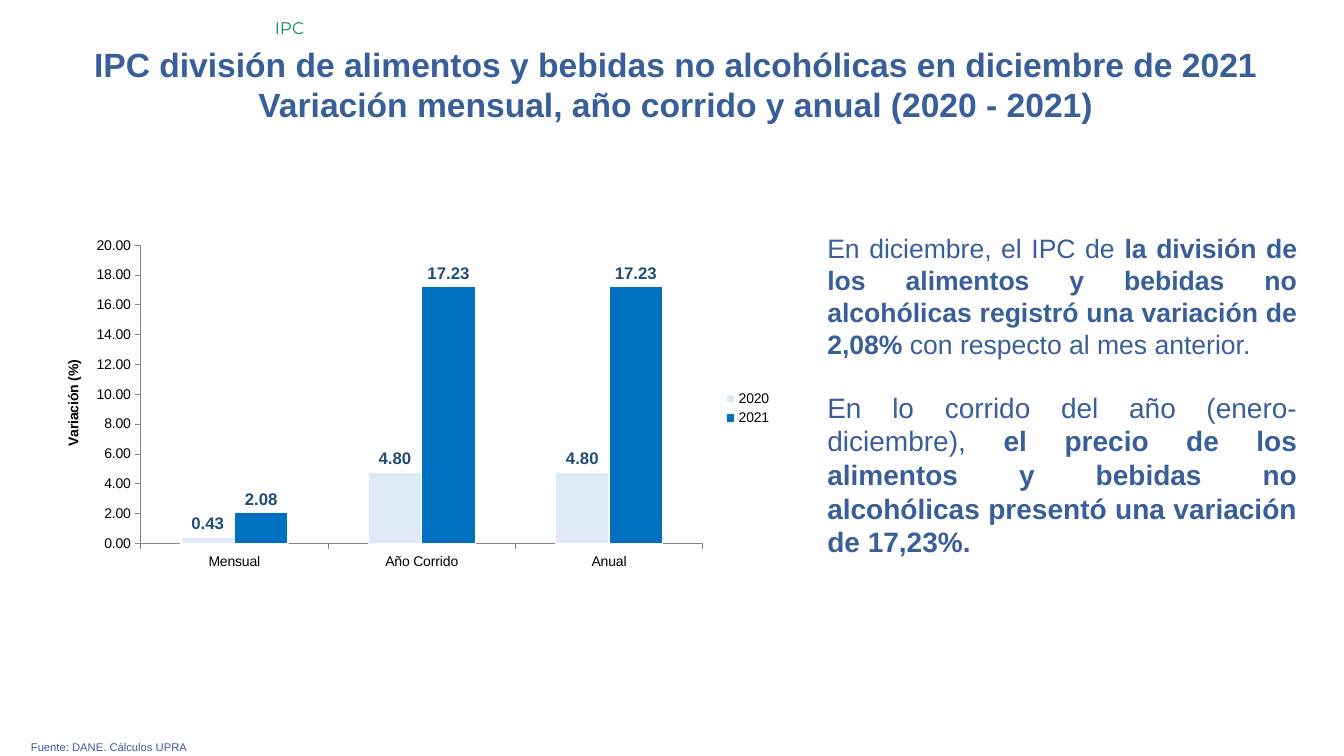
from dataclasses import dataclass

from lxml import etree
from pptx import Presentation
from pptx.chart.data import CategoryChartData
from pptx.dml.color import RGBColor
from pptx.enum.chart import (XL_CHART_TYPE, XL_LABEL_POSITION, XL_LEGEND_POSITION,
                             XL_TICK_LABEL_POSITION, XL_TICK_MARK)
from pptx.enum.text import PP_ALIGN
from pptx.oxml.ns import qn
from pptx.util import Cm, Pt

CLUSTERED = XL_CHART_TYPE.COLUMN_CLUSTERED
OUTSIDE_END = XL_LABEL_POSITION.OUTSIDE_END
LEGEND_RIGHT = XL_LEGEND_POSITION.RIGHT
LABELS_LOW = XL_TICK_LABEL_POSITION.LOW
TICK_OUT, TICK_NONE = XL_TICK_MARK.OUTSIDE, XL_TICK_MARK.NONE
LEFT, CENTER, JUSTIFY = PP_ALIGN.LEFT, PP_ALIGN.CENTER, PP_ALIGN.JUSTIFY


@dataclass(frozen=True)
class Theme:
    font: str = "Arial"
    tag_font: str = "Montserrat"
    blue: RGBColor = RGBColor(0x39, 0x5F, 0x9B)
    green: RGBColor = RGBColor(0x00, 0x92, 0x67)
    black: RGBColor = RGBColor(0x00, 0x00, 0x00)
    white: RGBColor = RGBColor(0xFF, 0xFF, 0xFF)
    axis: RGBColor = RGBColor(0x86, 0x86, 0x86)
    label: RGBColor = RGBColor(0x1F, 0x4E, 0x79)
    year_2020: RGBColor = RGBColor(0xDE, 0xEB, 0xF7)
    year_2021: RGBColor = RGBColor(0x00, 0x70, 0xC0)
    title_size: Pt = Pt(24)
    month_size: Pt = Pt(19)
    year_size: Pt = Pt(20)
    tag_size: Pt = Pt(12)
    label_size: Pt = Pt(12)
    chart_size: Pt = Pt(10)
    source_size: Pt = Pt(8)


theme = Theme()


def style_font(font, size, color, bold=False, name=theme.font):
    font.name, font.size, font.bold = name, size, bold
    font.color.rgb = color


def add_text(slide, box, paragraphs, alignment, color=theme.blue, name=theme.font, gap=Pt(0)):
    """Each paragraph is a size and a list of (text, bold) runs."""
    text_frame = slide.shapes.add_textbox(*map(Cm, box)).text_frame
    text_frame.word_wrap = True
    for index, (size, runs) in enumerate(paragraphs):
        paragraph = text_frame.add_paragraph() if index else text_frame.paragraphs[0]
        paragraph.alignment = alignment
        if index:
            paragraph.space_before = gap
        for text, bold in runs:
            run = paragraph.add_run()
            run.text = text
            style_font(run.font, size, color, bold, name)


presentation = Presentation()
presentation.slide_width, presentation.slide_height = Cm(33.87), Cm(19.05)
slide = presentation.slides.add_slide(presentation.slide_layouts[6])

# Title
add_text(slide, (1.14, 0.97, 31.78, 2.31), [
    (theme.title_size, [("IPC división de alimentos y bebidas no alcohólicas en diciembre de 2021", True)]),
    (theme.title_size, [("Variación mensual, año corrido y anual (2020 - 2021)", True)]),
], CENTER)

# Source line
add_text(slide, (0.53, 18.52, 32.79, 0.61),
         [(theme.source_size, [("Fuente: DANE. Cálculos UPRA", False)])], JUSTIFY)

# Commentary
add_text(slide, (20.6, 5.72, 12.34, 8.59), [
    (theme.month_size, [
        ("En diciembre, el IPC de ", False),
        ("la división de los alimentos y bebidas no alcohólicas registró una variación de 2,08% ", True),
        ("con respecto al mes anterior.", False)]),
    (theme.year_size, [
        ("En lo corrido del año (enero-diciembre), ", False),
        ("el precio de los alimentos y bebidas no alcohólicas presentó una variación de 17,23%.", True)]),
], JUSTIFY, gap=Pt(22))

# Section tag
add_text(slide, (6.68, 0.33, 27.18, 0.76), [(theme.tag_size, [("IPC", False)])],
         LEFT, theme.green, theme.tag_font)

# Chart
chart_data = CategoryChartData(number_format="#,##0.00")
chart_data.categories = ["Mensual", "Año Corrido", "Anual"]
chart_data.add_series("2020", (0.43, 4.8, 4.8))
chart_data.add_series("2021", (2.08, 17.23, 17.23))
chart = slide.shapes.add_chart(CLUSTERED, Cm(1.55), Cm(5.92), Cm(18.16), Cm(8.74), chart_data).chart
style_font(chart.font, theme.chart_size, theme.black)
chart.has_title = False
chart.has_legend = True
chart.legend.position = LEGEND_RIGHT
chart.legend.include_in_layout = False

# Columns and their labels
plot = chart.plots[0]
plot.gap_width, plot.overlap, plot.vary_by_categories = 150, 0, False
for series, color in zip(plot.series, (theme.year_2020, theme.year_2021)):
    series.format.fill.solid()
    series.format.fill.fore_color.rgb = color
    series.format.line.color.rgb = theme.white
    series.format.line.width = Pt(1)
    labels = series.data_labels
    labels.show_value, labels.position = True, OUTSIDE_END
    labels.number_format, labels.number_format_is_linked = "#,##0.00", False
    style_font(labels.font, theme.label_size, theme.label, True)

# Axes
for axis in (chart.category_axis, chart.value_axis):
    axis.has_major_gridlines = False
    axis.major_tick_mark, axis.minor_tick_mark = TICK_OUT, TICK_NONE
    axis.format.line.color.rgb = theme.axis
    axis.format.line.width = Pt(0.75)
chart.category_axis.tick_label_position = LABELS_LOW
value_axis = chart.value_axis
value_axis.minimum_scale, value_axis.maximum_scale, value_axis.major_unit = 0, 20, 2
value_axis.tick_labels.number_format = "#,##0.00"
value_axis.tick_labels.number_format_is_linked = False
title_run = value_axis.axis_title.text_frame.paragraphs[0].add_run()
title_run.text = "Variación (%)"
style_font(title_run.font, theme.chart_size, theme.black, True)

# Inner plot area as fractions of the chart
plot_area = plot.series[0].format.line and chart.element.find(".//" + qn("c:plotArea"))
for old_layout in plot_area.findall(qn("c:layout")):
    plot_area.remove(old_layout)
layout = etree.Element(qn("c:layout"))
plot_area.insert(0, layout)
manual = etree.SubElement(layout, qn("c:manualLayout"))
for tag, value in (("layoutTarget", "inner"), ("xMode", "edge"), ("yMode", "edge"),
                   ("x", "0.11"), ("y", "0.03"), ("w", "0.78"), ("h", "0.86")):
    etree.SubElement(manual, qn("c:" + tag)).set("val", value)

presentation.save("out.pptx")
